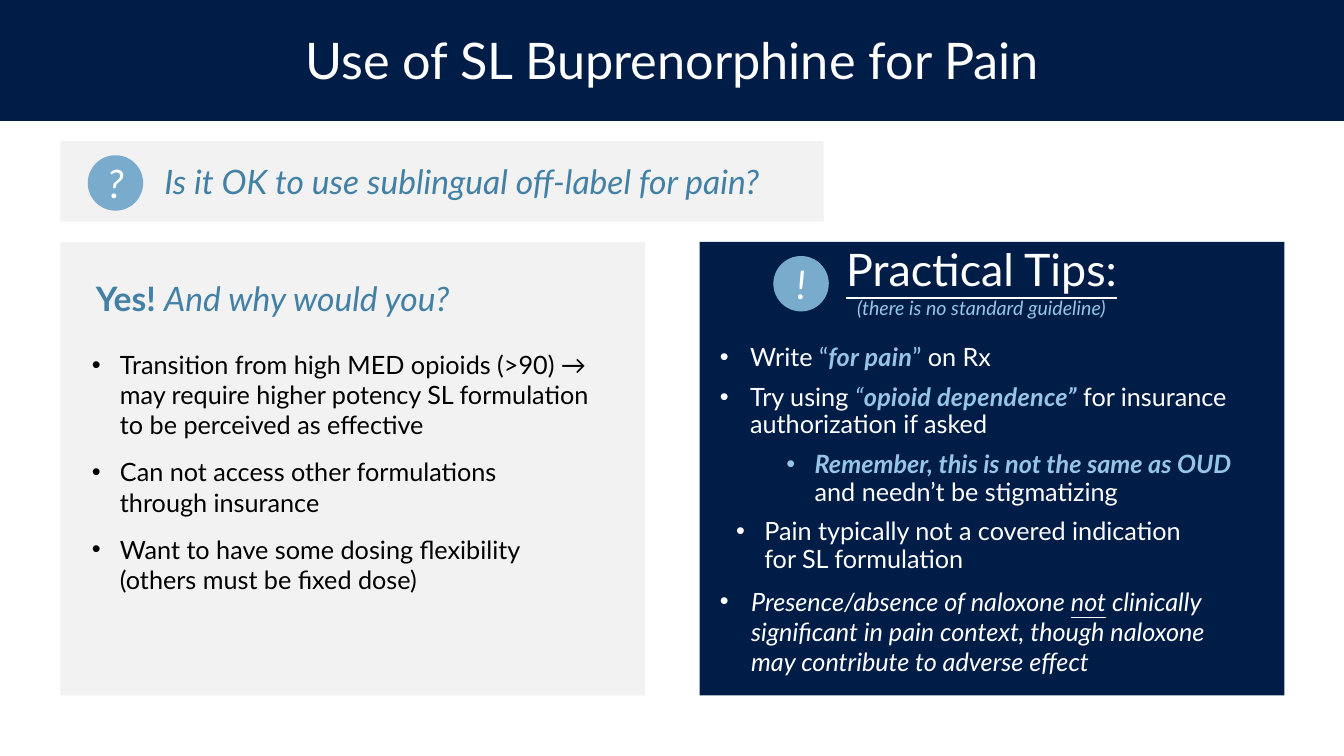
from lxml import etree
from pptx import Presentation
from pptx.dml.color import RGBColor
from pptx.enum.shapes import MSO_SHAPE
from pptx.enum.text import MSO_ANCHOR, MSO_AUTO_SIZE, PP_ALIGN
from pptx.oxml.ns import qn
from pptx.util import Inches, Pt

RECT, OVAL = MSO_SHAPE.RECTANGLE, MSO_SHAPE.OVAL
TOP, MIDDLE = MSO_ANCHOR.TOP, MSO_ANCHOR.MIDDLE
LEFT, CENTER = PP_ALIGN.LEFT, PP_ALIGN.CENTER
FIXED = MSO_AUTO_SIZE.NONE

HUES = {"navy": "001D48", "gray": "F2F2F2", "white": "FFFFFF", "black": "000000",
        "blue": "4280A5", "sky": "96C5E7", "disc": "79ACCC"}


def color(name):
    return RGBColor.from_string(HUES[name])


class Deck:
    face = "Lato"

    def __init__(self):
        self.prs = Presentation()
        self.prs.slide_width, self.prs.slide_height = Inches(13.33), Inches(7.5)
        self.slide = self.prs.slides.add_slide(self.prs.slide_layouts[5])

    def shape(self, kind, box, fill, turn=0):
        item = self.slide.shapes.add_shape(kind, *map(Inches, box))
        item.shadow.inherit = False
        item.fill.solid()
        item.fill.fore_color.rgb = color(fill)
        item.line.fill.background()
        item.rotation = turn
        return item

    def frame(self, item, inset, anchor=TOP):
        """Set insets (left, top, right, bottom) and anchor; return the text frame."""
        text = item.text_frame
        sides = dict(zip(("left", "top", "right", "bottom"), map(Inches, inset)))
        form = {"word_wrap": True, "auto_size": FIXED, "vertical_anchor": anchor}
        form.update({f"margin_{side}": size for side, size in sides.items()})
        for key, value in form.items():
            setattr(text, key, value)
        return text

    def title(self, box, words):
        item = self.slide.shapes.title
        item.left, item.top, item.width, item.height = map(Inches, box)
        self.slide.shapes._spTree.append(item._element)
        text = self.frame(item, (0, 0, 0, 0), MIDDLE)
        self.para(text, [(words, {})], {"size": 36, "hue": "white"},
                  alignment=CENTER, space_after=Pt(6))

    def text(self, box, inset):
        item = self.slide.shapes.add_textbox(*map(Inches, box))
        return self.frame(item, inset)

    def badge(self, left, top, mark, turn=0):
        item = self.shape(OVAL, (left, top, 0.55, 0.55), "disc", turn)
        text = self.frame(item, (0.1, 0.05, 0.1, 0.05), MIDDLE)
        self.para(text, [(mark, {})], {"size": 28, "hue": "white", "italic": True},
                  alignment=CENTER)

    def para(self, text, runs, base, indent=None, **form):
        """Add a paragraph; indent is (margin, hang), and a hang gives a bullet."""
        first = text.paragraphs[0]
        para = text.add_paragraph() if first.runs else first
        if indent:
            props = para._p.get_or_add_pPr()
            for key, value in zip(("marL", "indent"), indent):
                props.set(key, str(Inches(value)))
            if indent[1]:
                etree.SubElement(props, qn("a:buFont")).set("typeface", "Arial")
                etree.SubElement(props, qn("a:buChar")).set("char", "•")
        for key, value in {"alignment": LEFT, **form}.items():
            setattr(para, key, value)
        for words, change in runs:
            for row, line in enumerate(words.split("\n")):
                if row:
                    para.add_line_break()
                if line:
                    self.run(para, line, {**base, **change})

    def run(self, para, words, style):
        run = para.add_run()
        run.text = words
        form = dict(style)
        run.font.color.rgb = color(form.pop("hue"))
        track = form.pop("track", 0)
        if track:
            run._r.get_or_add_rPr().set("spc", str(round(track * 100)))
        form.update(name=self.face, size=Pt(form["size"]))
        for key, value in form.items():
            setattr(run.font, key, value)


def main():
    deck = Deck()
    for left, fill in ((0.6, "gray"), (6.94, "navy")):
        deck.shape(RECT, (left, 2.4, 5.8, 4.5), fill)
    deck.shape(RECT, (0, 0, 13.33, 1.2), "navy")
    deck.title((3.01, 0.16, 7.32, 0.85), "Use of SL Buprenorphine for Pain")

    ask = deck.shape(RECT, (0.6, 1.4, 7.57, 0.8), "gray")
    lead = {"size": 24, "hue": "blue", "italic": True}
    deck.para(deck.frame(ask, (1.03, 0.05, 0, 0.05), MIDDLE),
              [("Is it OK to use sublingual off-label for pain?", {})], lead)

    tips = deck.text((6.84, 2.4, 5.89, 4.93), (0, 0, 0.1, 0))
    white = {"size": 18, "hue": "white"}
    deck.para(tips, [("Practical Tips:\n", {"size": 32, "underline": True}),
                     ("(there is no standard guideline)",
                      {"size": 14, "hue": "sky", "italic": True})],
              white, alignment=CENTER, space_after=Pt(12.5))
    sky = {"hue": "sky"}
    slant = {"hue": "sky", "italic": True, "track": 0.2}
    strong = {**slant, "bold": True}
    ital = {"italic": True}
    points = [
        (0, (0.6, -0.3), 0.9, [("Write ", {}), ("“", sky), ("for pain", strong),
                               ("” ", sky), ("on Rx", {})]),
        (0, (0.6, -0.3), 0.9, [("Try using ", {}), ("“", slant),
                               ("opioid dependence” ", strong),
                               ("for insurance authorization if asked", {})]),
        (2, (1.24, -0.28), 0.9, [("Remember, this is not the same as OUD ",
                                  {**strong, "track": 0}),
                                 ("and needn’t be stigmatizing", {})]),
        (1, (0.74, -0.28), 0.9, [("Pain typically not a covered indication \n"
                                  "for SL formulation", {})]),
        (1, (0.61, -0.31), 1.0, [("Presence/absence of naloxone ", ital),
                                 ("not", {"italic": True, "underline": True}),
                                 (" clinically \nsignificant in pain context, though naloxone \n"
                                  "may contribute to adverse effect", ital)]),
    ]
    for level, indent, pitch, runs in points:
        deck.para(tips, runs, white, indent, level=level, line_spacing=pitch,
                  space_before=Pt(6), space_after=Pt(3))

    deck.badge(0.87, 1.54, "?")

    why = deck.text((0.7, 2.71, 5.21, 3.9), (0.2, 0.05, 0, 0))
    deck.para(why, [("Yes! ", {"bold": True, "italic": False}),
                    ("And why would you?", {})], lead, (0.05, 0), space_after=Pt(16))
    for words in (
        "Transition from high MED opioids (>90) → \n"
        "may require higher potency SL formulation to be perceived as effective",
        "Can not access other formulations \nthrough insurance",
        "Want to have some dosing flexibility \n(others must be fixed dose)",
    ):
        deck.para(why, [(words, {})], {"size": 18, "hue": "black"}, (0.29, -0.28),
                  space_before=Pt(6), space_after=Pt(6))

    deck.badge(7.67, 2.54, "!", 358)
    deck.prs.save("out.pptx")


if __name__ == "__main__":
    main()
